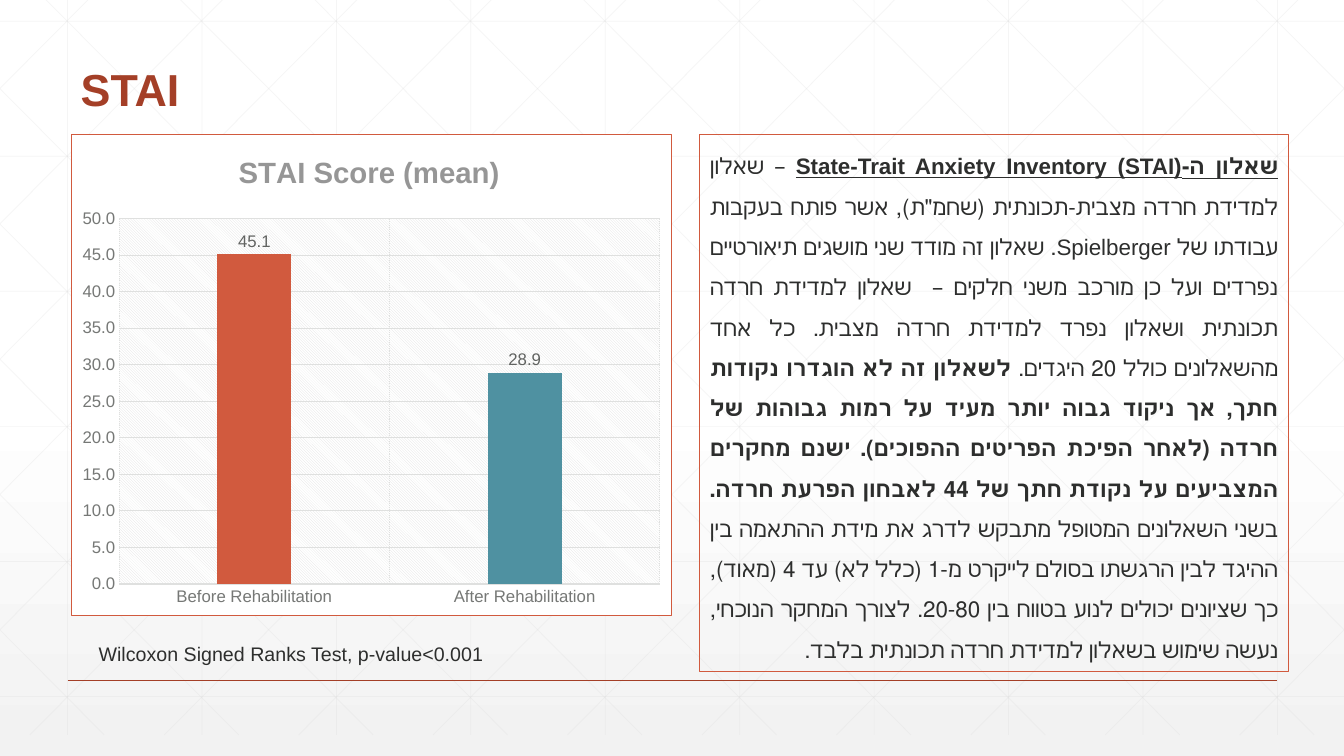
from lxml.etree import SubElement
from pptx import Presentation
from pptx.chart.data import CategoryChartData
from pptx.dml.color import RGBColor
from pptx.enum.chart import XL_CHART_TYPE, XL_LABEL_POSITION, XL_TICK_MARK
from pptx.enum.dml import MSO_LINE
from pptx.enum.text import MSO_ANCHOR, MSO_AUTO_SIZE, PP_ALIGN
from pptx.oxml import parse_xml
from pptx.oxml.ns import nsdecls, qn
from pptx.util import Inches, Pt

FONT = "Arial"
DARK, RUST, ORANGE, TEAL = "2D2E2D", "A43F27", "D15A3E", "4F91A1"
GRID, AXIS, LABEL, HEADING = "DFE0DF", "767876", "616361", "969696"

TITLE = "STAI"
NOTE = "Wilcoxon Signed Ranks Test, p-value<0.001"
BODY = [
    ("שאלון ה-State-Trait Anxiety Inventory (STAI)", True, True),
    (" – שאלון למדידת חרדה מצבית-תכונתית (שחמ\"ת), אשר פותח בעקבות עבודתו של Spielberger. "
     "שאלון זה מודד שני מושגים תיאורטיים נפרדים ועל כן מורכב משני חלקים –  שאלון למדידת חרדה "
     "תכונתית ושאלון נפרד למדידת חרדה מצבית. כל אחד מהשאלונים כולל 20 היגדים. ", False, False),
    ("לשאלון זה לא הוגדרו נקודות חתך, אך ניקוד גבוה יותר מעיד על רמות גבוהות של חרדה "
     "(לאחר הפיכת הפריטים ההפוכים). ישנם מחקרים המצביעים על נקודת חתך של 44 לאבחון "
     "הפרעת חרדה.", True, False),
    (" בשני השאלונים המטופל מתבקש לדרג את מידת ההתאמה בין ההיגד לבין הרגשתו בסולם לייקרט "
     "מ-1 (כלל לא) עד 4 (מאוד), כך שציונים יכולים לנוע בטווח בין 20-80. לצורך המחקר הנוכחי, "
     "נעשה שימוש בשאלון למדידת חרדה תכונתית בלבד.", False, False),
]
CHART_TITLE = "STAI Score (mean)"
SCORES = [("Before Rehabilitation", 45.1, ORANGE), ("After Rehabilitation", 28.9, TEAL)]

WIDTH, HEIGHT = 13.33, 7.5
TOP, BOTTOM = -0.21, 7.29
STEP = 4 / 3
DIAGONAL_RUN = 7.45


def rgb(value):
    return RGBColor.from_string(value)


def style(font, size, color, bold=False):
    font.name, font.size, font.bold = FONT, Pt(size), bold
    font.color.rgb = rgb(color)


def place(sp, left, top, width, height):
    sp.left, sp.top, sp.width, sp.height = map(Inches, (left, top, width, height))


def add_line(shapes, x1, y1, x2, y2, color, weight, opacity=None):
    line = shapes.add_connector(1, *map(Inches, (x1, y1, x2, y2)))
    line.line.color.rgb = rgb(color)
    line.line.width = Pt(weight)
    sp_pr = line._element.spPr
    if opacity:
        SubElement(sp_pr.find(".//" + qn("a:srgbClr")), qn("a:alpha"), val=str(opacity * 1000))
    SubElement(sp_pr, qn("a:effectLst"))


def lattice():
    for i in range(10):
        x = 0.67 + STEP * i
        yield x, TOP, x, BOTTOM
    for i in range(6):
        y = 0.21 + 1.34 * i
        yield 0, y, WIDTH, y
    slope = (BOTTOM - TOP) / DIAGONAL_RUN
    for i in range(-5, 10):
        x = 0.25 + STEP * i
        x1, x2 = max(x, 0), min(x + DIAGONAL_RUN, WIDTH)
        y1, y2 = (TOP + slope * (end - x) for end in (x1, x2))
        yield x1, y1, x2, y2
        yield WIDTH - x1, y1, WIDTH - x2, y2


def set_layout(parent, index, inner=False, **fractions):
    for old in parent.findall(qn("c:layout")):
        parent.remove(old)
    layout = parse_xml(f"<c:layout {nsdecls('c')}><c:manualLayout/></c:layout>")
    manual = layout[0]
    if inner:
        SubElement(manual, qn("c:layoutTarget"), val="inner")
    for axis in "xy":
        SubElement(manual, qn(f"c:{axis}Mode"), val="edge")
    for key, value in fractions.items():
        SubElement(manual, qn(f"c:{key}"), val=str(value))
    parent.insert(index, layout)


def add_score_chart(shapes):
    data = CategoryChartData(number_format="###0.0")
    data.categories = [name for name, _, _ in SCORES]
    data.add_series("Series 1", [score for _, score, _ in SCORES])
    box = map(Inches, (0.7, 1.33, 5.97, 4.78))
    chart = shapes.add_chart(XL_CHART_TYPE.COLUMN_CLUSTERED, *box, data).chart
    style(chart.font, 10, DARK)
    chart.has_legend = False
    chart.has_title = True
    p = chart.chart_title.text_frame.paragraphs[0]
    p.text = CHART_TITLE
    style(p.runs[0].font, 21, HEADING, True)

    for axis in (chart.category_axis, chart.value_axis):
        axis.major_tick_mark = axis.minor_tick_mark = XL_TICK_MARK.NONE
        axis.has_major_gridlines = True
        style(axis.tick_labels.font, 12, AXIS)
        for line in (axis.format.line, axis.major_gridlines.format.line):
            line.color.rgb = rgb(GRID)
            line.width = Pt(0.75)
    chart.category_axis.major_gridlines.format.line.dash_style = MSO_LINE.ROUND_DOT
    values = chart.value_axis
    values.format.line.fill.background()
    values.minimum_scale, values.maximum_scale, values.major_unit = 0, 50, 5
    values.tick_labels.number_format = "###0.0"
    values.tick_labels.number_format_is_linked = False

    plot = chart.plots[0]
    plot.gap_width, plot.overlap, plot.vary_by_categories = 267, -43, False
    for i, (_, _, color) in enumerate(SCORES):
        fill = plot.series[0].points[i].format.fill
        fill.solid()
        fill.fore_color.rgb = rgb(color)
    plot.has_data_labels = True
    labels = plot.data_labels
    labels.show_value = True
    labels.position = XL_LABEL_POSITION.OUTSIDE_END
    labels.number_format, labels.number_format_is_linked = "###0.0", False
    style(labels.font, 12, LABEL)

    space = chart._chartSpace
    area = space.find(qn("c:chart"))
    plot_area = area.find(qn("c:plotArea"))
    set_layout(area.find(qn("c:title")), 1, x=0.27, y=0.03)
    set_layout(plot_area, 0, inner=True, x=0.08, y=0.175, w=0.9, h=0.76)
    plot_area.append(parse_xml(
        f'<c:spPr {nsdecls("c", "a")}><a:pattFill prst="ltDnDiag">'
        f'<a:fgClr><a:srgbClr val="{GRID}"/></a:fgClr>'
        '<a:bgClr><a:srgbClr val="FFFFFF"/></a:bgClr></a:pattFill></c:spPr>'))
    area.addnext(parse_xml(
        f'<c:spPr {nsdecls("c", "a")}><a:solidFill><a:srgbClr val="FFFFFF"/></a:solidFill>'
        f'<a:ln w="{Pt(0.75)}"><a:solidFill><a:srgbClr val="{ORANGE}"/></a:solidFill></a:ln></c:spPr>'))


def main():
    prs = Presentation()
    prs.slide_width, prs.slide_height = Inches(WIDTH), Inches(HEIGHT)
    s = prs.slides.add_slide(prs.slide_layouts[1])
    title, body = s.shapes.title, s.placeholders[1]

    fill = s.background.fill
    fill.gradient()
    fill.gradient_angle = 270
    for stop, position, color in zip(fill.gradient_stops, (0.53, 1), ("FFFFFF", "F2F2F2")):
        stop.position = position
        stop.color.rgb = rgb(color)

    for ends in lattice():
        add_line(s.shapes, *ends, "D9D9D9", 0.5, 25)
    add_line(s.shapes, 0.67, 6.75, 12.67, 6.75, RUST, 1)
    for sp in (title, body):
        s.shapes._spTree.append(sp._element)

    place(title, 0.7, 0.52, 10.5, 0.68)
    tf = title.text_frame
    tf.text = TITLE
    tf.vertical_anchor, tf.auto_size = MSO_ANCHOR.BOTTOM, MSO_AUTO_SIZE.NONE
    p = tf.paragraphs[0]
    p.alignment, p.line_spacing = PP_ALIGN.LEFT, 0.9
    style(p.runs[0].font, 32, RUST, True)

    place(body, 6.94, 1.33, 5.84, 5.33)
    body.line.color.rgb = rgb(ORANGE)
    body.line.width = Pt(0.75)
    tf = body.text_frame
    tf.auto_size = MSO_AUTO_SIZE.NONE
    p = tf.paragraphs[0]
    p.alignment, p.line_spacing, p.space_before = PP_ALIGN.JUSTIFY, 1.5, Pt(18)
    p_pr = p._p.get_or_add_pPr()
    for key, value in (("marL", "0"), ("marR", "0"), ("indent", "0"), ("rtl", "1")):
        p_pr.set(key, value)
    SubElement(p_pr, qn("a:buNone"))
    for text, bold, underline in BODY:
        r = p.add_run()
        r.text = text
        style(r.font, 16, DARK, bold)
        r.font.underline = underline

    tf = s.shapes.add_textbox(*map(Inches, (0.88, 6.32, 4.93, 0.34))).text_frame
    tf.word_wrap, tf.auto_size = True, MSO_AUTO_SIZE.SHAPE_TO_FIT_TEXT
    tf.text = NOTE
    style(tf.paragraphs[0].runs[0].font, 14, DARK)

    add_score_chart(s.shapes)
    prs.save("out.pptx")


if __name__ == "__main__":
    main()
